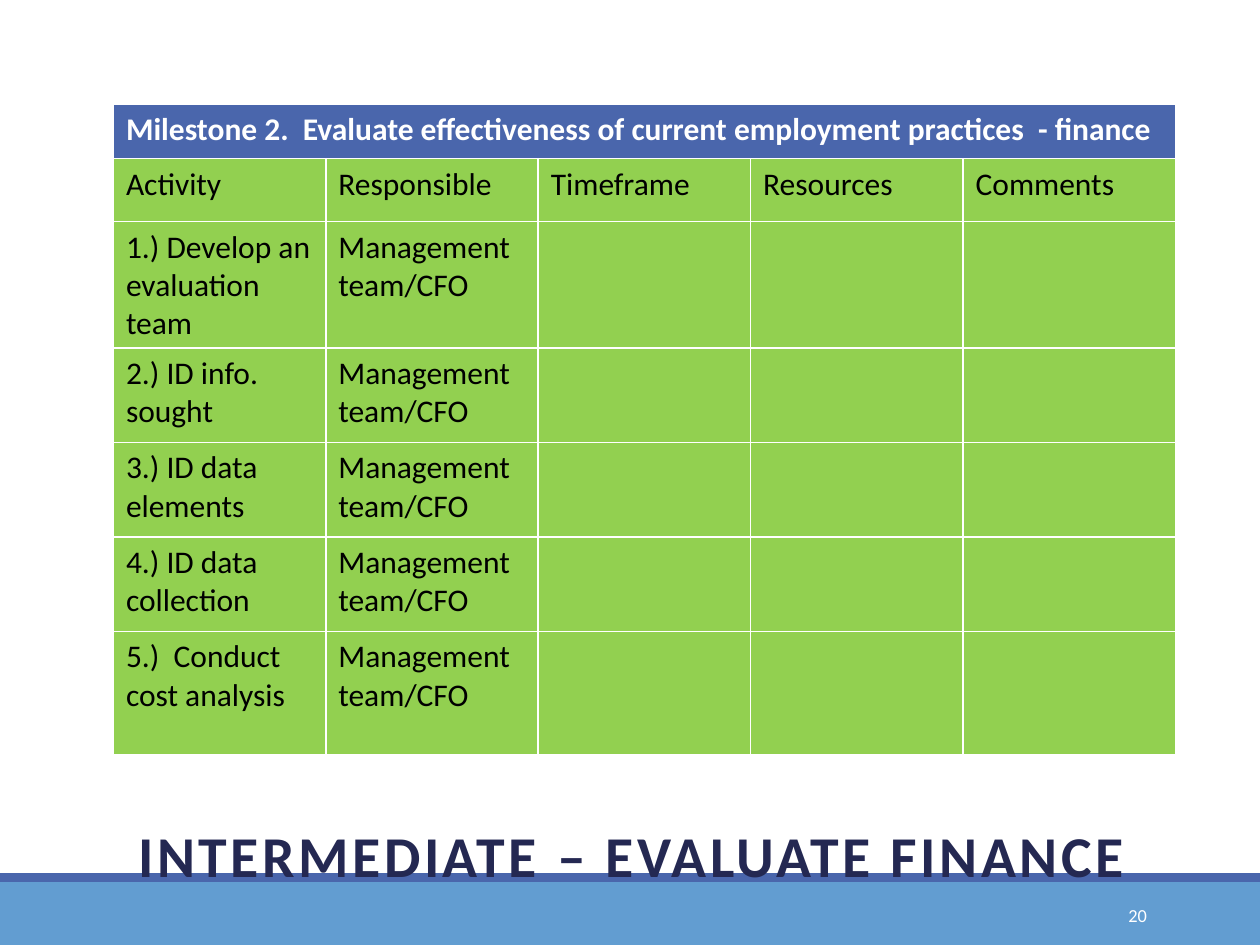
"""Build the milestone slide on the evaluation of finance practices."""
from pptx import Presentation, util as u
from pptx.dml.color import RGBColor
from pptx.enum import shapes, text

NAVY = RGBColor(0x24, 0x28, 0x52)
BLUE = RGBColor(0x4A, 0x66, 0xAC)
SKY = RGBColor(0x62, 0x9D, 0xD1)
GREEN = RGBColor(0x92, 0xD0, 0x50)
BLACK = RGBColor(0, 0, 0)
WHITE = RGBColor(0xFF, 0xFF, 0xFF)

WIDE, HIGH = u.Inches(10), u.Inches(7.5)
LEFT = 0.9
COLS = 5
ROWS = [0.43, 0.5, 0.98, 0.75, 0.75, 0.75, 0.98]
HEAD = "Milestone 2.  Evaluate effectiveness of current employment practices  - finance"
LABELS = ["Activity", "Responsible", "Timeframe", "Resources", "Comments"]
TASKS = [
    "1.) Develop an evaluation team",
    "2.) ID info. sought",
    "3.) ID data elements",
    "4.) ID data  collection",
    "5.)  Conduct cost analysis",
]
OWNER = "Management team/CFO"


def style(frame, size, color, bold=False):
    for para in frame.paragraphs:
        for run in para.runs:
            font = run.font
            font.name, font.size, font.bold = "Calibri", u.Pt(size), bold
            font.color.rgb = color


def band(slide, top, tall, color):
    bar = slide.shapes.add_shape(
        shapes.MSO_SHAPE.RECTANGLE, 0, u.Inches(top), WIDE, u.Inches(tall))
    bar.shadow.inherit = False
    bar.fill.solid()
    bar.fill.fore_color.rgb = color
    bar.line.fill.background()


def title(slide, words):
    box = slide.shapes.title
    box.left, box.top = u.Inches(LEFT), u.Inches(5.96)
    box.width, box.height = u.Inches(8.25), u.Inches(1.11)
    frame = box.text_frame
    frame.text = words
    frame.auto_size = text.MSO_AUTO_SIZE.NONE
    frame.vertical_anchor = text.MSO_ANCHOR.BOTTOM
    frame.margin_left, frame.margin_right = u.Inches(0.2), 0
    frame.margin_bottom = u.Inches(0.02)
    para = frame.paragraphs[0]
    para.alignment = text.PP_ALIGN.LEFT
    para.line_spacing = 0.8
    style(frame, 33, NAVY, True)
    para.runs[0].font._element.set("spc", "200")
    shapes_tree = slide.shapes._spTree
    shapes_tree.append(box._element)


def number(slide, words):
    box = slide.shapes.add_textbox(
        u.Inches(8.12), u.Inches(7.06), u.Inches(1.08), u.Inches(0.4))
    frame = box.text_frame
    frame.word_wrap = True
    frame.text = words
    frame.vertical_anchor = text.MSO_ANCHOR.MIDDLE
    frame.paragraphs[0].alignment = text.PP_ALIGN.RIGHT
    style(frame, 10.5, WHITE)


def fill(cell, words, back, color, bold=False):
    cell.fill.solid()
    cell.fill.fore_color.rgb = back
    if words:
        cell.text = words
        style(cell.text_frame, 18, color, bold)


def plan(slide):
    grid = slide.shapes.add_table(
        len(ROWS), COLS, u.Inches(LEFT), u.Inches(0.83),
        u.Inches(8.43), u.Inches(sum(ROWS))).table
    grid.horz_banding = False
    for row, tall in zip(grid.rows, ROWS):
        row.height = u.Inches(tall)
    grid.cell(0, 0).merge(grid.cell(0, COLS - 1))
    fill(grid.cell(0, 0), HEAD, BLUE, WHITE, True)
    lines = [LABELS] + [[task, OWNER, "", "", ""] for task in TASKS]
    for r, line in enumerate(lines, 1):
        for c, words in enumerate(line):
            fill(grid.cell(r, c), words, GREEN, BLACK)


def main():
    deck = Presentation()
    deck.slide_width, deck.slide_height = WIDE, HIGH
    slide = deck.slides.add_slide(deck.slide_layouts[5])
    band(slide, 7, 0.5, SKY)
    band(slide, 6.93, 0.07, BLUE)
    title(slide, "INTERMEDIATE – EVALUATE FINANCE")
    number(slide, "20")
    plan(slide)
    deck.save("out.pptx")


if __name__ == "__main__":
    main()
